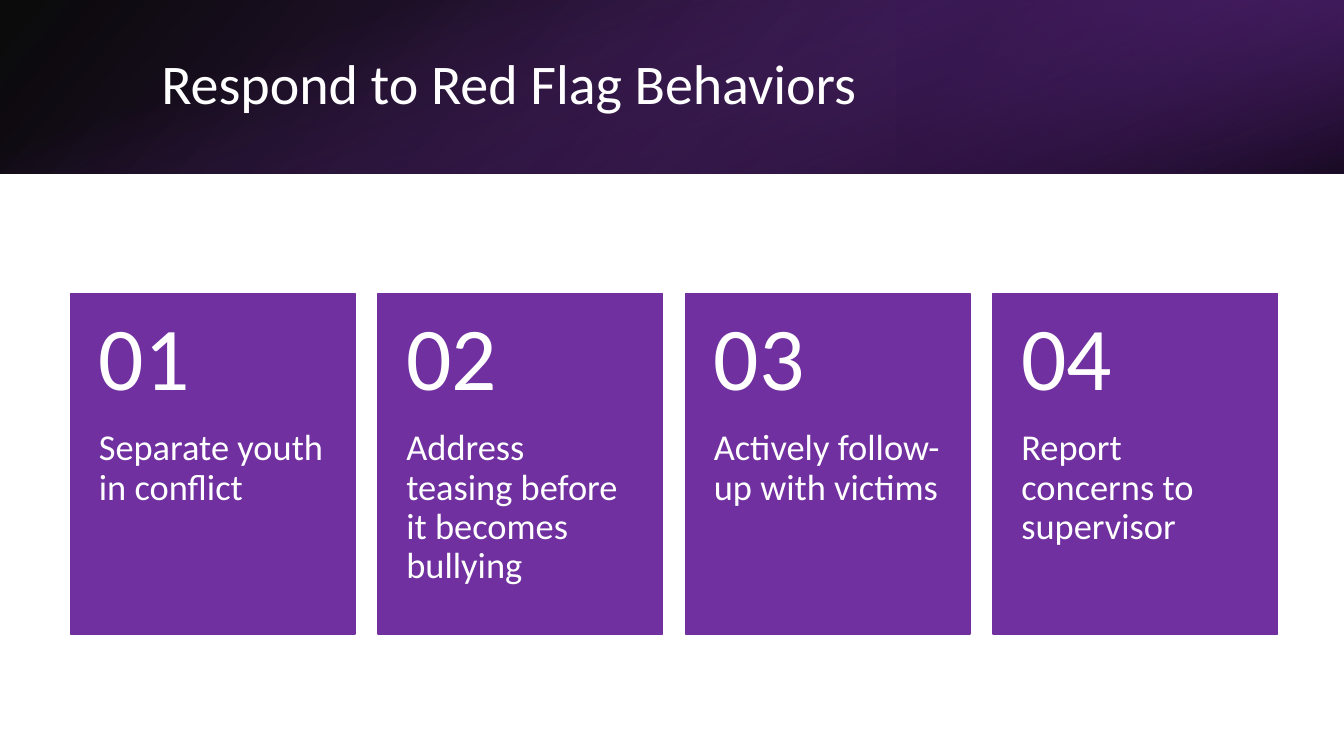
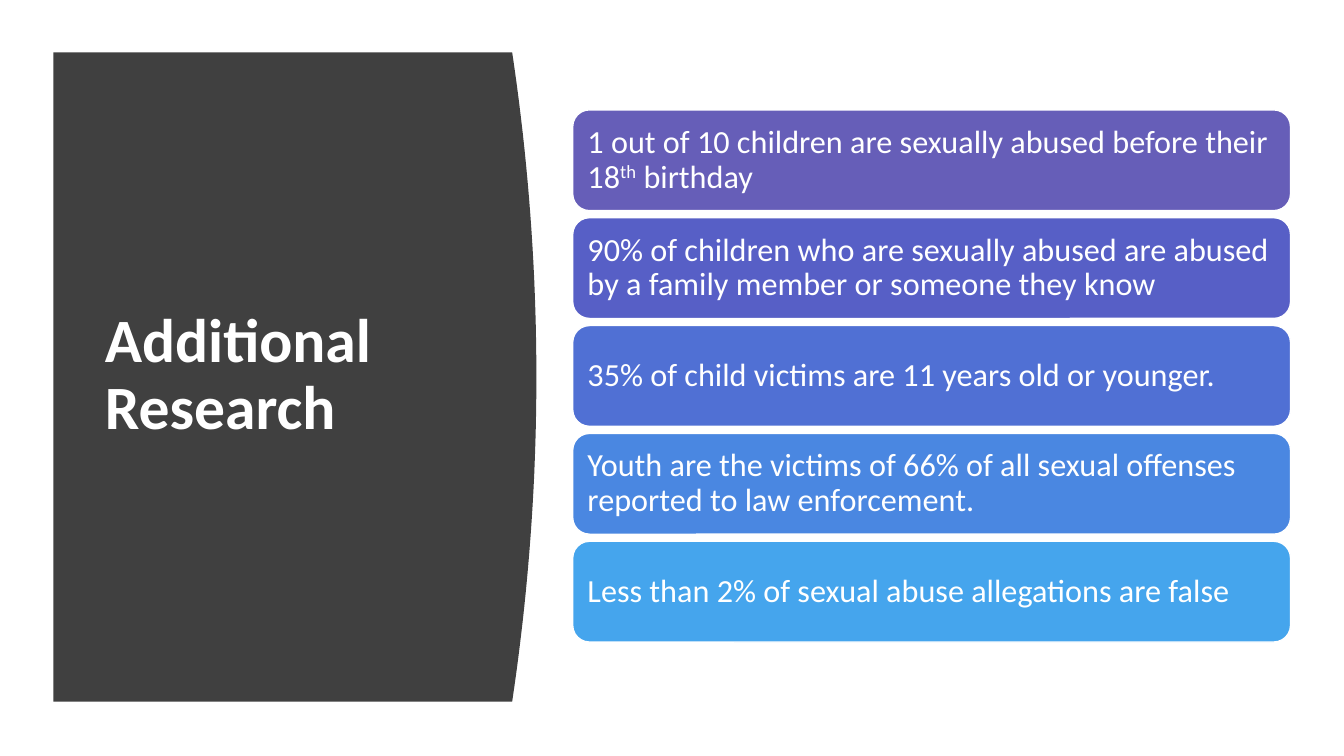
"""Build two slides on responding to red flag behaviors and abuse research."""
from dataclasses import dataclass

from lxml import etree
from pptx import Presentation
from pptx.dml.color import RGBColor
from pptx.enum.shapes import MSO_SHAPE
from pptx.enum.text import MSO_ANCHOR, MSO_AUTO_SIZE, PP_ALIGN
from pptx.oxml.ns import qn
from pptx.presentation import Presentation as Deck
from pptx.shapes.autoshape import Shape
from pptx.slide import Slide
from pptx.text.text import TextFrame
from pptx.util import Inches, Pt

RECTANGLE = MSO_SHAPE.RECTANGLE
ROUNDED = MSO_SHAPE.ROUNDED_RECTANGLE
TOP, MIDDLE = MSO_ANCHOR.TOP, MSO_ANCHOR.MIDDLE
NO_AUTOFIT = MSO_AUTO_SIZE.NONE
LEFT = PP_ALIGN.LEFT

FONT = "Calibri"
WHITE, BLACK = "FFFFFF", "000000"
PURPLE, CHARCOAL = "7030A0", "404040"
WIDTH, HEIGHT, BAND = 13.33, 7.5, 1.72
TITLE_ONLY = 5


@dataclass(frozen=True)
class Box:
    left: float
    top: float
    width: float
    height: float

    def lengths(self) -> list[Inches]:
        return [Inches(v) for v in (self.left, self.top, self.width, self.height)]


@dataclass(frozen=True)
class Style:
    size: float
    bold: bool = False
    anchor: MSO_ANCHOR = MIDDLE
    insets: tuple[float, float, float, float] = (0.1, 0.1, 0.1, 0.1)


@dataclass(frozen=True)
class Run:
    text: str
    raised: bool = False


@dataclass(frozen=True)
class Stop:
    position: float
    color: str
    opacity: int


@dataclass(frozen=True)
class Layer:
    box: Box
    angle: int
    stops: tuple[Stop, Stop]
    rotation: int = 0
    flipped: bool = False


@dataclass(frozen=True)
class Fact:
    color: str
    runs: tuple[Run, ...]


BAND_LAYERS = (
    Layer(Box(0, 0, WIDTH, BAND), 140,
          (Stop(0, BLACK, 96), Stop(1, "542478", 100)), flipped=True),
    Layer(Box(8.89, 0, 4.44, BAND), 320,
          (Stop(0.19, "381850", 68), Stop(1, PURPLE, 79)), 180, True),
    Layer(Box((WIDTH - BAND) / 2, (BAND - WIDTH) / 2, BAND, WIDTH), 340,
          (Stop(0.23, PURPLE, 0), Stop(0.99, BLACK, 74)), 90),
)
STEPS = (
    "Separate youth in conflict",
    "Address teasing before it becomes bullying",
    "Actively follow-up with victims",
    "Report concerns to supervisor",
)
FACTS = (
    Fact("665EB8", (Run("1 out of 10 children are sexually abused before their 18"),
                    Run("th", raised=True), Run(" birthday"))),
    Fact("575FC6", (Run("90% of children who are sexually abused are abused by a "
                        "family member or someone they know"),)),
    Fact("5070D4", (Run("35% of child victims are 11 years old or younger."),)),
    Fact("4A87E1", (Run("Youth are the victims of 66% of all sexual offenses "
                        "reported to law enforcement."),)),
    Fact("45A5ED", (Run("Less than 2% of sexual abuse allegations are false"),)),
)
STEP_NUMBER = Style(64, insets=(0.28, 0.18, 0.28, 0.18))
STEP_TEXT = Style(26, anchor=TOP, insets=(0.28, 1.35, 0.28, 0.36))
FACT_TEXT = Style(23)
BAND_TITLE = Style(40, insets=(0.1, 0.05, 0.1, 0.05))
PANEL_TITLE = Style(44, bold=True, insets=(0.1, 0.05, 0.1, 0.05))


def rgb(color: str) -> RGBColor:
    """Turn a hex string into a colour."""
    return RGBColor.from_string(color)


def write(frame: TextFrame, runs: tuple[Run, ...], style: Style) -> None:
    """Write white left-aligned runs into a text frame."""
    frame.word_wrap = True
    frame.auto_size = NO_AUTOFIT
    frame.vertical_anchor = style.anchor
    (frame.margin_left, frame.margin_top,
     frame.margin_right, frame.margin_bottom) = map(Inches, style.insets)
    paragraph = frame.paragraphs[0]
    paragraph.alignment = LEFT
    paragraph.line_spacing = 0.9
    for part in runs:
        run = paragraph.add_run()
        run.text = part.text
        run.font.name = FONT
        run.font.size = Pt(style.size)
        run.font.bold = style.bold
        run.font.color.rgb = rgb(WHITE)
        if part.raised:
            run.font._element.set("baseline", "30000")


def paint(shape: Shape, fill: str, outline: str | None = None) -> None:
    """Give a shape a flat fill and an optional outline."""
    shape.shadow.inherit = False
    shape.fill.solid()
    shape.fill.fore_color.rgb = rgb(fill)
    if outline:
        shape.line.color.rgb = rgb(outline)
        shape.line.width = Pt(1)
    else:
        shape.line.fill.background()


def add_layer(slide: Slide, layer: Layer) -> None:
    """Draw one translucent gradient layer of the title band."""
    shape = slide.shapes.add_shape(RECTANGLE, *layer.box.lengths())
    shape.shadow.inherit = False
    shape.line.fill.background()
    shape.rotation = layer.rotation
    properties = shape._element.spPr
    if layer.flipped:
        properties.find(qn("a:xfrm")).set("flipH", "1")
    shape.fill.gradient()
    shape.fill.gradient_angle = 360 - layer.angle
    for target, stop in zip(shape.fill.gradient_stops, layer.stops):
        target.color.rgb = rgb(stop.color)
        target.position = stop.position
    for color, stop in zip(properties.iter(qn("a:srgbClr")), layer.stops):
        etree.SubElement(color, qn("a:alpha")).set("val", str(stop.opacity * 1000))


def add_title(slide: Slide, text: str, box: Box, style: Style) -> None:
    """Place the title placeholder in front of its backdrop."""
    title = slide.shapes.title
    title.left, title.top, title.width, title.height = box.lengths()
    write(title.text_frame, (Run(text),), style)
    slide.shapes._spTree.append(title._element)


def add_panel(slide: Slide) -> None:
    """Draw the dark panel whose right edge bows out as a parabola."""
    left, top, bottom, peak, bow, segments = 0.53, 0.52, 6.96, 5.32, 0.24, 40
    middle, reach = (top + bottom) / 2, (bottom - top) / 2
    ratios = [2 * i / segments - 1 for i in range(segments + 1)]
    edge = [(Inches(peak - bow * t * t), Inches(middle + reach * t)) for t in ratios]
    outline = slide.shapes.build_freeform(Inches(left), Inches(top))
    outline.add_line_segments([*edge, (Inches(left), Inches(bottom))], close=True)
    paint(outline.convert_to_shape(), CHARCOAL)


def add_step(slide: Slide, index: int, text: str) -> None:
    """Draw one numbered step card."""
    left, top, width = 0.7 + index * 3.05, 2.91, 2.82
    card = slide.shapes.add_shape(RECTANGLE, *Box(left, top, width, 3.38).lengths())
    paint(card, PURPLE, PURPLE)
    write(card.text_frame, (Run(text),), STEP_TEXT)
    number = slide.shapes.add_textbox(*Box(left, top, width, 1.35).lengths())
    write(number.text_frame, (Run(f"{index + 1:02}"),), STEP_NUMBER)


def add_fact(slide: Slide, index: int, fact: Fact) -> None:
    """Draw one rounded research fact."""
    box = Box(5.68, 1.09 + index * 1.07, 7.12, 1)
    bar = slide.shapes.add_shape(ROUNDED, *box.lengths())
    paint(bar, fact.color, WHITE)
    write(bar.text_frame, fact.runs, FACT_TEXT)


def add_slide(deck: Deck) -> Slide:
    """Add a title-only slide."""
    return deck.slides.add_slide(deck.slide_layouts[TITLE_ONLY])


def build_steps(deck: Deck) -> None:
    """Build the slide of response steps."""
    slide = add_slide(deck)
    for layer in BAND_LAYERS:
        add_layer(slide, layer)
    add_title(slide, "Respond to Red Flag Behaviors",
              Box(1.5, 0.38, 10.98, 0.96), BAND_TITLE)
    for index, text in enumerate(STEPS):
        add_step(slide, index, text)


def build_research(deck: Deck) -> None:
    """Build the slide of research facts."""
    slide = add_slide(deck)
    add_panel(slide)
    add_title(slide, "Additional Research", Box(0.94, 1.11, 3.74, 5.24), PANEL_TITLE)
    for index, fact in enumerate(FACTS):
        add_fact(slide, index, fact)


def main() -> None:
    """Build and save the presentation."""
    deck = Presentation()
    deck.slide_width, deck.slide_height = Inches(WIDTH), Inches(HEIGHT)
    build_steps(deck)
    build_research(deck)
    deck.save("out.pptx")


if __name__ == "__main__":
    main()
